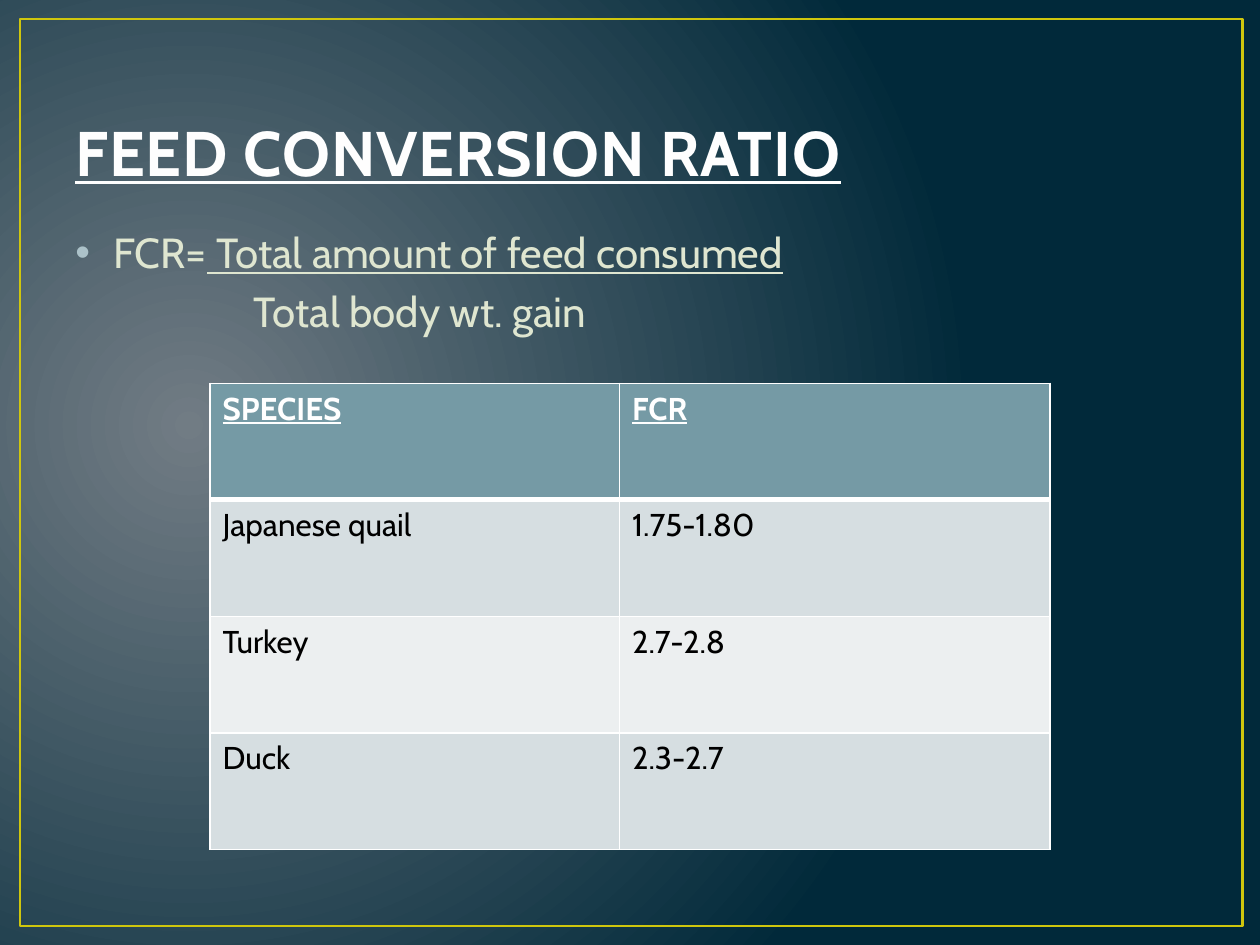
import pptx
import pptx.dml.color
import pptx.enum.shapes
import pptx.enum.text
import pptx.oxml
import pptx.oxml.ns
import pptx.util
from pptx.util import Pt

FONT = "Cabin"
COLORS = {
    "glow": "717C84",
    "night": "01293A",
    "frame": "CFC60D",
    "title": "FEFEFE",
    "body": "DFE6D0",
    "bullet": "ACC2C9",
    "header": "759AA5",
    "band_dark": "D6DEE1",
    "band_light": "ECEFF0",
    "white": "FFFFFF",
    "black": "000000",
}
ROWS = [
    ("SPECIES", "FCR"),
    ("Japanese quail", "1.75-1.80"),
    ("Turkey", "2.7-2.8"),
    ("Duck", "2.3-2.7"),
]
COLUMN_WIDTHS = (234, 246)
ROW_HEIGHT = 66.6


def rgb(name):
    return pptx.dml.color.RGBColor.from_string(COLORS[name])


def xml(text):
    """Parse a fragment whose root declares the drawing namespace as {ns}."""
    return pptx.oxml.parse_xml(text.replace("{ns}", pptx.oxml.ns.nsdecls("a")))


def set_font(font, size, color, bold=False, underline=False):
    font.name = FONT
    font.size = Pt(size)
    font.color.rgb = rgb(color)
    font.bold = bold
    font.underline = underline


def set_background(slide):
    """Radial gradient that glows from the left of the slide."""
    fill = slide.background.fill
    fill.gradient()
    for stop, color in zip(fill.gradient_stops, ("glow", "night")):
        stop.color.rgb = rgb(color)
    gradient = slide.background._cSld.find(".//" + pptx.oxml.ns.qn("a:gradFill"))
    linear = gradient.find(pptx.oxml.ns.qn("a:lin"))
    gradient.replace(linear, xml(
        '<a:path {ns} path="circle">'
        '<a:fillToRect l="15000" t="50000" r="85000" b="60000"/></a:path>'))


def add_frame(slide):
    frame = slide.shapes.add_shape(
        pptx.enum.shapes.MSO_SHAPE.RECTANGLE, Pt(11.5), Pt(10.8), Pt(698.4), Pt(518.4))
    frame.shadow.inherit = False
    frame.fill.background()
    frame.line.color.rgb = rgb("frame")
    frame.line.width = Pt(1.5)


def add_text_frame(slide, top, height, anchor):
    shape = slide.shapes.add_textbox(Pt(36), Pt(top), Pt(648), Pt(height))
    shape.text_frame.word_wrap = True
    shape.text_frame.vertical_anchor = anchor
    return shape.text_frame


def add_title(slide):
    text_frame = add_text_frame(slide, 21.6, 90, pptx.enum.text.MSO_ANCHOR.BOTTOM)
    paragraph = text_frame.paragraphs[0]
    run = paragraph.add_run()
    run.text = "FEED CONVERSION RATIO"
    set_font(paragraph.font, 36, "title", bold=True, underline=True)
    set_font(run.font, 36, "title", bold=True, underline=True)
    run.font._element.set("spc", "50")


def set_indent(paragraph, left, first=0):
    properties = paragraph._p.get_or_add_pPr()
    properties.set("marL", str(Pt(left)))
    properties.set("indent", str(Pt(first)))


def add_bullet(paragraph):
    properties = paragraph._p.get_or_add_pPr()
    children = (
        f'<a:buClr {{ns}}><a:srgbClr val="{COLORS["bullet"]}"/></a:buClr>',
        '<a:buFont {ns} typeface="Arial"/>',
        '<a:buChar {ns} char="•"/>',
    )
    position = 1 if properties.find(pptx.oxml.ns.qn("a:spcBef")) is not None else 0
    for offset, child in enumerate(children):
        properties.insert(position + offset, xml(child))


def add_formula(slide):
    """The ratio, with the underlined numerator above the denominator."""
    text_frame = add_text_frame(slide, 126, 356.4, pptx.enum.text.MSO_ANCHOR.TOP)
    numerator = text_frame.paragraphs[0]
    denominator = text_frame.add_paragraph()
    parts = (
        (numerator, "FCR=", False),
        (numerator, " Total amount of feed consumed", True),
        (denominator, "Total body wt. gain", False),
    )
    for paragraph, text, underline in parts:
        paragraph.space_before = Pt(4.8)
        run = paragraph.add_run()
        run.text = text
        set_font(run.font, 24, "body", underline=underline)
    set_indent(numerator, 21.6, -21.6)
    add_bullet(numerator)
    set_indent(denominator, 102)


def set_borders(cell, top, bottom):
    properties = cell._tc.get_or_add_tcPr()
    for side, width in (("L", 1), ("R", 1), ("T", top), ("B", bottom)):
        properties.append(xml(
            f'<a:ln{side} {{ns}} w="{Pt(width)}"><a:solidFill>'
            f'<a:srgbClr val="{COLORS["white"]}"/></a:solidFill></a:ln{side}>'))


def fill_cell(cell, text, row):
    is_header = row == 0
    cell.text = text
    paragraph = cell.text_frame.paragraphs[0]
    color = "white" if is_header else "black"
    for font in (paragraph.font, paragraph.runs[0].font):
        set_font(font, 18, color, bold=is_header, underline=is_header)
    set_borders(cell, top=3 if row == 1 else 1, bottom=3 if is_header else 1)
    cell.fill.solid()
    band = "band_dark" if row % 2 else "band_light"
    cell.fill.fore_color.rgb = rgb("header" if is_header else band)


def add_ratio_table(slide):
    table = slide.shapes.add_table(
        len(ROWS), len(COLUMN_WIDTHS), Pt(120), Pt(219),
        Pt(sum(COLUMN_WIDTHS)), Pt(ROW_HEIGHT * len(ROWS))).table
    for column, width in zip(table.columns, COLUMN_WIDTHS):
        column.width = Pt(width)
    for row, texts in enumerate(ROWS):
        table.rows[row].height = Pt(ROW_HEIGHT)
        for column, text in enumerate(texts):
            fill_cell(table.cell(row, column), text, row)


def main():
    presentation = pptx.Presentation()
    presentation.slide_width = Pt(720)
    presentation.slide_height = Pt(540)
    slide = presentation.slides.add_slide(presentation.slide_layouts[6])
    set_background(slide)
    add_frame(slide)
    add_title(slide)
    add_formula(slide)
    add_ratio_table(slide)
    presentation.save("out.pptx")


if __name__ == "__main__":
    main()
